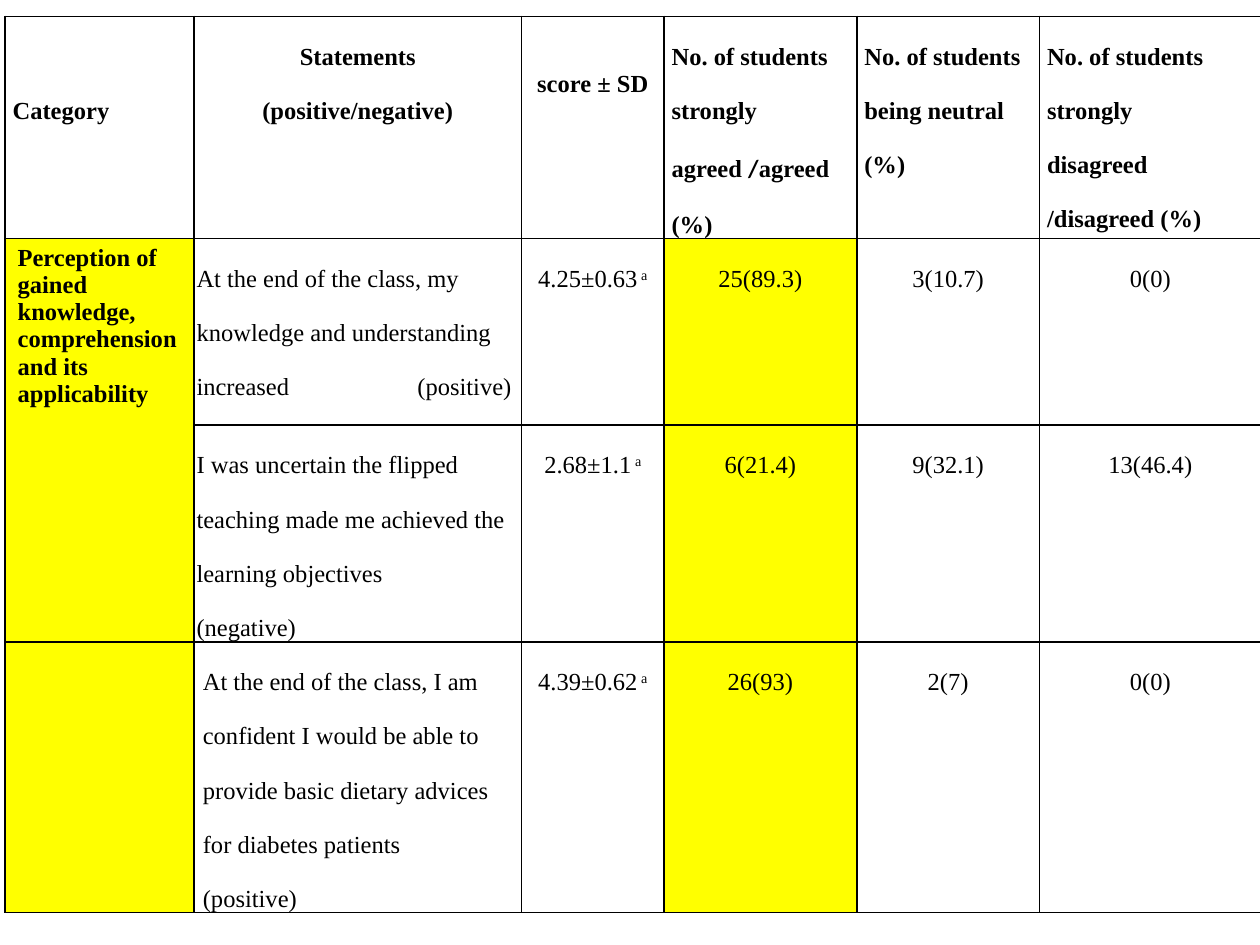
from dataclasses import dataclass

from lxml import etree
from pptx import Presentation
from pptx.dml.color import RGBColor
from pptx.enum.text import PP_ALIGN
from pptx.oxml.ns import qn
from pptx.table import _Cell
from pptx.util import Inches, Pt

BLACK = RGBColor(0, 0, 0)
WHITE = RGBColor(255, 255, 255)
YELLOW = RGBColor(255, 255, 0)
LEFT, CENTER = PP_ALIGN.LEFT, PP_ALIGN.CENTER

SERIF, SANS = "Times New Roman", "Calibri"
TEXT_SIZE = Pt(14)
TEXT_LINE = 0.43  # height of one double-spaced line, inches
TAB_STOP = 2.5

COLUMN_WIDTHS = (1.5, 2.6, 1.13, 1.53, 1.45, 1.76)
ROW_HEIGHTS = (1.76, 1.48, 1.72, 2.15)
CATEGORY_COLUMN, AGREED_COLUMN = 0, 3


@dataclass(frozen=True)
class Heading:
    lines: tuple[str, ...]
    align: PP_ALIGN = LEFT
    lines_down: float = 0


@dataclass(frozen=True)
class Statement:
    lines: tuple[str, ...]
    score: str
    counts: tuple[str, str, str]
    inset: float = 0.02


HEADINGS = (
    Heading(("Category",), lines_down=1),
    Heading(("Statements", "(positive/negative)"), CENTER),
    Heading(("score ± SD",), CENTER, lines_down=0.5),
    Heading(("No. of students strongly agreed /agreed (%)",)),
    Heading(("No. of students", "being neutral (%)")),
    Heading(("No. of students strongly disagreed /disagreed (%)",)),
)
CATEGORY = "Perception of gained knowledge, comprehension and its applicability"
STATEMENTS = (
    Statement(
        ("At the end of the class, my knowledge and understanding "
         "increased\t(positive)",),
        "4.25±0.63", ("25(89.3)", "3(10.7)", "0(0)")),
    Statement(
        ("I was uncertain the flipped teaching made me achieved the "
         "learning objectives", "(negative)"),
        "2.68±1.1", ("6(21.4)", "9(32.1)", "13(46.4)")),
    Statement(
        ("At the end of the class, I am confident I would be able to provide "
         "basic dietary advices for diabetes patients", "(positive)"),
        "4.39±0.62", ("26(93)", "2(7)", "0(0)"), inset=0.07),
)


def style_run(run, bold: bool, font: str = SERIF) -> None:
    run.font.name = font
    run.font.size = TEXT_SIZE
    run.font.bold = bold
    run.font.color.rgb = BLACK


def write_cell(cell: _Cell, lines: tuple[str, ...], align: PP_ALIGN = LEFT,
               bold: bool = False, spacing: float = 2) -> None:
    cell.text_frame.text = "\n".join(lines)
    for paragraph in cell.text_frame.paragraphs:
        paragraph.alignment = align
        paragraph.line_spacing = spacing
        for run in paragraph.runs:
            style_run(run, bold)


def set_insets(cell: _Cell, side: float, top: float = 0) -> None:
    cell.margin_left = cell.margin_right = Inches(side)
    cell.margin_top, cell.margin_bottom = Inches(top), 0


def add_right_tab(cell: _Cell) -> None:
    properties = cell.text_frame.paragraphs[0]._p.get_or_add_pPr()
    tabs = etree.SubElement(properties, qn("a:tabLst"))
    etree.SubElement(tabs, qn("a:tab"), pos=str(Inches(TAB_STOP)), algn="r")


def add_note_mark(cell: _Cell) -> None:
    """Append the superscript that points to footnote a."""
    run = cell.text_frame.paragraphs[0].add_run()
    run.text = " a"
    style_run(run, bold=False)
    run._r.get_or_add_rPr().set("baseline", "30000")


def draw_borders(cell: _Cell) -> None:
    properties = cell._tc.get_or_add_tcPr()
    for index, side in enumerate(("a:lnL", "a:lnR", "a:lnT", "a:lnB")):
        line = etree.Element(qn(side), w=str(Pt(1)))
        fill = etree.SubElement(line, qn("a:solidFill"))
        etree.SubElement(fill, qn("a:srgbClr"), val=str(BLACK))
        properties.insert(index, line)


def write_heading(cell: _Cell, heading: Heading) -> None:
    write_cell(cell, heading.lines, heading.align, bold=True)
    set_insets(cell, 0.06, heading.lines_down * TEXT_LINE)


def write_statement(cells: list[_Cell], statement: Statement) -> None:
    text_cell, score_cell, *count_cells = cells
    write_cell(text_cell, statement.lines)
    write_cell(score_cell, (statement.score,), CENTER)
    add_note_mark(score_cell)
    for cell, count in zip(count_cells, statement.counts):
        write_cell(cell, (count,), CENTER)
    for cell in cells:
        set_insets(cell, statement.inset)
    if "\t" in statement.lines[0]:
        add_right_tab(text_cell)


def split_slash(cell: _Cell) -> None:
    """Set the slash of the agreement heading in the sans font."""
    paragraph = cell.text_frame.paragraphs[0]
    before, after = paragraph.text.split("/")
    paragraph.runs[0].text = before
    for text, font in (("/", SANS), (after, SERIF)):
        run = paragraph.add_run()
        run.text = text
        style_run(run, bold=True, font=font)


def main() -> None:
    presentation = Presentation()
    presentation.slide_width, presentation.slide_height = Inches(10), Inches(7.5)
    slide = presentation.slides.add_slide(presentation.slide_layouts[6])
    table = slide.shapes.add_table(
        len(ROW_HEIGHTS), len(COLUMN_WIDTHS), Inches(0.04), Inches(0.13),
        Inches(sum(COLUMN_WIDTHS)), Inches(sum(ROW_HEIGHTS))).table
    table.first_row = table.horz_banding = False
    for column, width in zip(table.columns, COLUMN_WIDTHS):
        column.width = Inches(width)
    for row, height in zip(table.rows, ROW_HEIGHTS):
        row.height = Inches(height)

    for row_index, row in enumerate(table.rows):
        for column_index, cell in enumerate(row.cells):
            marked = row_index > 0 and column_index in (CATEGORY_COLUMN, AGREED_COLUMN)
            cell.fill.solid()
            cell.fill.fore_color.rgb = YELLOW if marked else WHITE
            draw_borders(cell)

    for column_index, heading in enumerate(HEADINGS):
        write_heading(table.cell(0, column_index), heading)
    split_slash(table.cell(0, AGREED_COLUMN))

    category_cell = table.cell(1, CATEGORY_COLUMN)
    category_cell.merge(table.cell(2, CATEGORY_COLUMN))
    write_cell(category_cell, (CATEGORY,), bold=True, spacing=1)
    for row_index, statement in enumerate(STATEMENTS, start=1):
        write_statement(list(table.rows[row_index].cells)[1:], statement)

    presentation.save("out.pptx")


if __name__ == "__main__":
    main()
